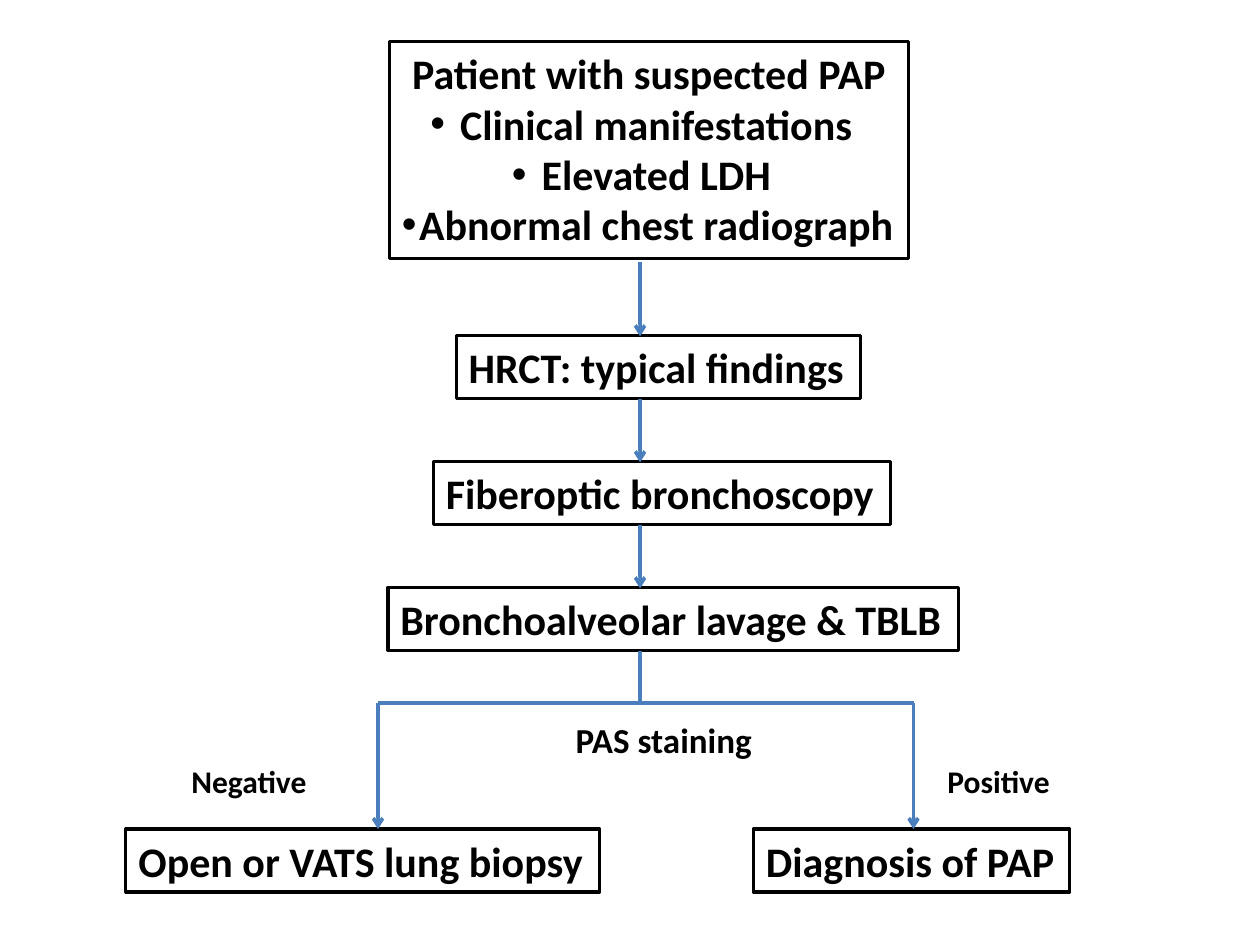
from lxml import etree
from pptx import Presentation
from pptx.dml.color import RGBColor
from pptx.enum.shapes import MSO_CONNECTOR
from pptx.enum.text import MSO_AUTO_SIZE, PP_ALIGN
from pptx.oxml.ns import qn
from pptx.util import Inches, Pt

STRAIGHT = MSO_CONNECTOR.STRAIGHT
GROW = MSO_AUTO_SIZE.SHAPE_TO_FIT_TEXT
LEFT, CENTER = PP_ALIGN.LEFT, PP_ALIGN.CENTER
BLACK = RGBColor(0x00, 0x00, 0x00)
BLUE = RGBColor(0x4B, 0x7E, 0xBC)


def write(p, text, size=24, align=LEFT, bullet=False):
    p.alignment = align
    if bullet:
        pPr = p._p.get_or_add_pPr()
        etree.SubElement(pPr, qn("a:buFont"), typeface="Arial")
        etree.SubElement(pPr, qn("a:buChar"), char="•")
    r = p.add_run()
    r.text = text
    r.font.name = "Calibri"
    r.font.size = Pt(size)
    r.font.bold = True
    r.font.color.rgb = BLACK


class Flowchart:
    """Draws flowchart elements in one style on the current slide."""

    def __init__(self, s):
        self.s = s

    def label(self, x, y, w, h, text, **fmt):
        sp = self.s.shapes.add_textbox(Inches(x), Inches(y), Inches(w), Inches(h))
        tf = sp.text_frame
        tf.word_wrap = False
        tf.auto_size = GROW
        write(tf.paragraphs[0], text, **fmt)
        return sp

    def box(self, x, y, w, h, text, bullets=(), **fmt):
        sp = self.label(x, y, w, h, text, **fmt)
        sp.line.color.rgb = BLACK
        sp.line.width = Pt(1.75)
        for item in bullets:
            write(sp.text_frame.add_paragraph(), item, bullet=True, **fmt)

    def line(self, x1, y1, x2, y2, arrow=False):
        c = self.s.shapes.add_connector(
            STRAIGHT, Inches(x1), Inches(y1), Inches(x2), Inches(y2))
        c.line.color.rgb = BLUE
        c.line.width = Pt(2)
        if arrow:
            etree.SubElement(c.line._get_or_add_ln(), qn("a:tailEnd"), type="arrow")
        etree.SubElement(c._element.spPr, qn("a:effectLst"))


def main():
    prs = Presentation()
    prs.slide_width, prs.slide_height = Inches(10), Inches(7.5)
    chart = Flowchart(prs.slides.add_slide(prs.slide_layouts[6]))

    chart.box(3.09, 0.33, 4.12, 1.72, "Patient with suspected PAP",
              ["Clinical manifestations", "Elevated LDH",
               "Abnormal chest radiograph"], align=CENTER)

    steps = [(3.62, 3.21, "HRCT: typical findings"),
             (3.44, 3.63, "Fiberoptic bronchoscopy"),
             (3.08, 4.53, "Bronchoalveolar lavage & TBLB")]
    for i, (x, w, text) in enumerate(steps):
        chart.box(x, 2.66 + i, w, 0.5, text)
    for x, w, text in [(1, 3.76, "Open or VATS lung biopsy"),
                       (5.98, 2.51, "Diagnosis of PAP")]:
        chart.box(x, 6.58, w, 0.5, text)

    chart.label(4.47, 5.65, 1.61, 0.44, "PAS staining", size=20)

    trunk, left, right, fork = 5.08, 3, 7.25, 5.58
    chart.line(trunk, 5.17, trunk, fork)
    chart.line(left, fork, right, fork)
    for x in (left, right):
        chart.line(x, fork, x, 6.58, arrow=True)
    for i, top in enumerate((2.08, 3.17, 4.17)):
        chart.line(trunk, top, trunk, 2.67 + i, arrow=True)

    chart.label(7.42, 6, 1.02, 0.4, "Positive", size=18)
    chart.label(1.42, 6, 1.12, 0.4, "Negative", size=18)
    prs.save("out.pptx")


if __name__ == "__main__":
    main()
